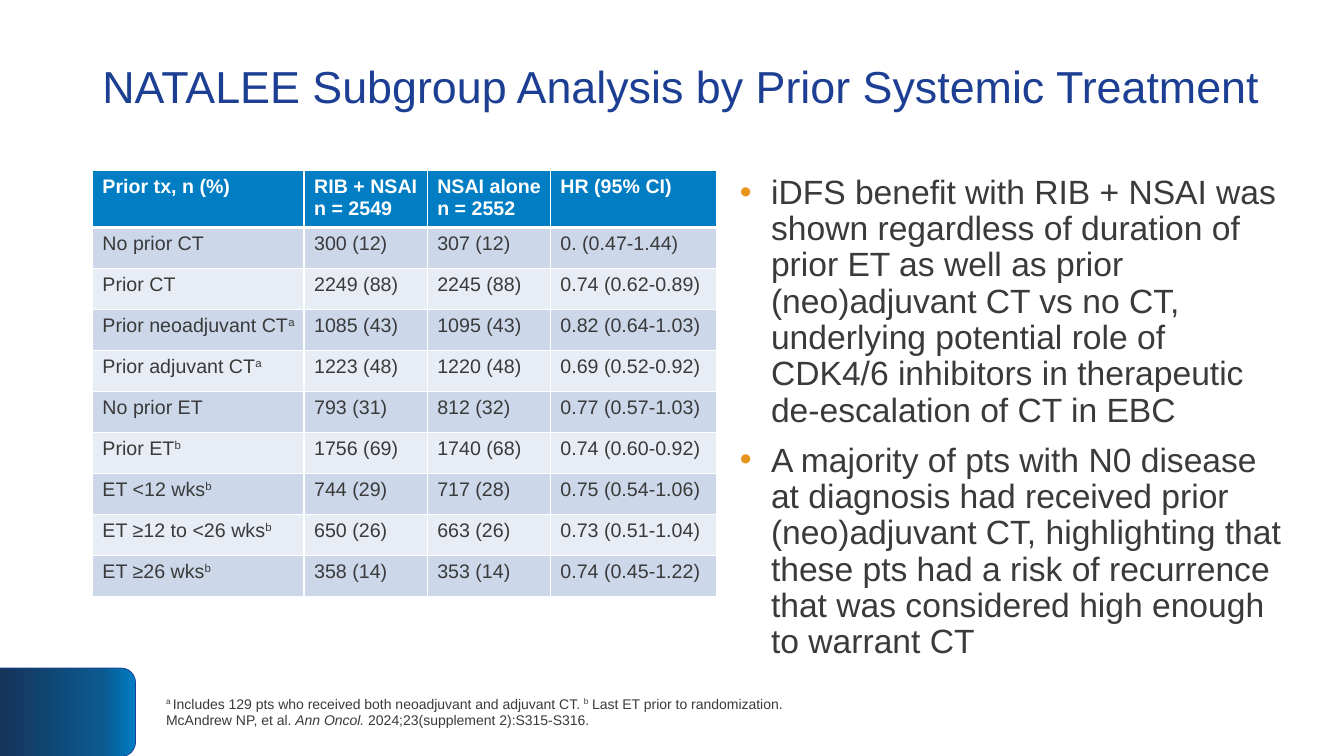
from lxml import etree
from pptx import Presentation
from pptx.dml.color import RGBColor
from pptx.enum.shapes import MSO_SHAPE
from pptx.enum.text import MSO_ANCHOR
from pptx.oxml import parse_xml
from pptx.oxml.ns import nsdecls, qn
from pptx.util import Inches, Pt

MIDDLE, TOP = MSO_ANCHOR.MIDDLE, MSO_ANCHOR.TOP
TAB_SHAPE = MSO_SHAPE.ROUND_2_SAME_RECTANGLE
BLUE = RGBColor(0x00, 0x7D, 0xC3)
MID_BLUE = RGBColor(0x0B, 0x59, 0x8F)
NAVY = RGBColor(0x15, 0x34, 0x5A)
TITLE_BLUE = RGBColor(0x1C, 0x3F, 0x93)
INK = RGBColor(0x3A, 0x3A, 0x3A)
ORANGE = RGBColor(0xE8, 0x93, 0x1A)
WHITE = RGBColor(0xFF, 0xFF, 0xFF)
BANDS = (RGBColor(0xCC, 0xD7, 0xE9), RGBColor(0xE7, 0xEC, 0xF5))

WIDTH, HEIGHT = Inches(13.33), Inches(7.5)
COLS, ROWS = 160, 90
LEFT, TOP_ROW = 11, 20.28  # shared content origin

TITLE = "NATALEE Subgroup Analysis by Prior Systemic Treatment"
# ^ toggles superscript, * toggles italic
TABLE = [
    ("Prior tx, n (%)", "RIB + NSAI\nn = 2549", "NSAI alone\nn = 2552", "HR (95% CI)"),
    ("No prior CT", "300 (12)", "307 (12)", "0. (0.47-1.44)"),
    ("Prior CT", "2249 (88)", "2245 (88)", "0.74 (0.62-0.89)"),
    ("Prior neoadjuvant CT^a", "1085 (43)", "1095 (43)", "0.82 (0.64-1.03)"),
    ("Prior adjuvant CT^a", "1223 (48)", "1220 (48)", "0.69 (0.52-0.92)"),
    ("No prior ET", "793 (31)", "812 (32)", "0.77 (0.57-1.03)"),
    ("Prior ET^b", "1756 (69)", "1740 (68)", "0.74 (0.60-0.92)"),
    ("ET <12 wks^b", "744 (29)", "717 (28)", "0.75 (0.54-1.06)"),
    ("ET ≥12 to <26 wks^b", "650 (26)", "663 (26)", "0.73 (0.51-1.04)"),
    ("ET ≥26 wks^b", "358 (14)", "353 (14)", "0.74 (0.45-1.22)"),
]
FINDINGS = [
    "iDFS benefit with RIB + NSAI was shown regardless of duration of prior ET as well as "
    "prior (neo)adjuvant CT vs no CT, underlying potential role of CDK4/6 inhibitors in "
    "therapeutic de-escalation of CT in EBC",
    "A majority of pts with N0 disease at diagnosis had received prior (neo)adjuvant CT, "
    "highlighting that these pts had a risk of recurrence that was considered high enough "
    "to warrant CT",
]
FOOTNOTES = [
    "^a ^Includes 129 pts who received both neoadjuvant and adjuvant CT. "
    "^b^ Last ET prior to randomization.",
    "McAndrew NP, et al. *Ann Oncol. *2024;23(supplement 2):S315-S316.",
]


class SlideBuilder:
    font = "Arial"

    def __init__(self, prs):
        self.s = prs.slides.add_slide(prs.slide_layouts[6])

    def x(self, cols):
        return round(WIDTH * cols / COLS)

    def y(self, rows):
        return round(HEIGHT * rows / ROWS)

    def box(self, left, top, width, height):
        return self.x(left), self.y(top), self.x(width), self.y(height)

    def add_runs(self, p, text, size, color, bold=False):
        """Fill a paragraph, turning line breaks and toggles into runs."""
        for n, line in enumerate(text.split("\n")):
            if n:
                p.add_line_break()
            for i, part in enumerate(line.split("^")):
                for j, piece in enumerate(part.split("*")):
                    if not piece:
                        continue
                    r = p.add_run()
                    r.text = piece
                    r.font.name, r.font.size = self.font, Pt(size)
                    r.font.bold, r.font.italic = bold, j % 2 == 1
                    r.font.color.rgb = color
                    if i % 2:
                        r.font._element.set("baseline", "30000")

    def bullet(self, p, color):
        pPr = p._p.get_or_add_pPr()
        indent = Inches(0.31)
        pPr.set("marL", str(indent))
        pPr.set("indent", str(-indent))
        clr = etree.SubElement(pPr, qn("a:buClr"))
        etree.SubElement(clr, qn("a:srgbClr"), val=str(color))
        etree.SubElement(pPr, qn("a:buFont"), typeface=self.font)
        etree.SubElement(pPr, qn("a:buChar"), char="•")

    def text(self, area, lines, size, color, anchor=TOP, spacing=1.0, gap=0, bullet=None):
        tf = self.s.shapes.add_textbox(*self.box(*area)).text_frame
        tf.word_wrap, tf.vertical_anchor = True, anchor
        for i, line in enumerate(lines):
            p = tf.add_paragraph() if i else tf.paragraphs[0]
            if bullet is not None:
                self.bullet(p, bullet)
            p.line_spacing = spacing
            if i:
                p.space_before = Pt(gap)
            self.add_runs(p, line, size, color)

    def corner_tab(self, area, stops, line):
        sp = self.s.shapes.add_shape(TAB_SHAPE, *self.box(*area))
        sp.rotation = 90
        sp.shadow.inherit = False
        sp.line.color.rgb, sp.line.width = line, Pt(0.5)
        gs = "".join(f'<a:gs pos="{pos * 1000}"><a:srgbClr val="{color}"/></a:gs>'
                     for pos, color in stops)
        grad = parse_xml(f'<a:gradFill {nsdecls("a")} rotWithShape="1"><a:gsLst>{gs}</a:gsLst>'
                         '<a:lin ang="5400000" scaled="0"/></a:gradFill>')
        sp._element.spPr.find(qn("a:prstGeom")).addnext(grad)

    def borders(self, cell, top, bottom):
        tcPr = cell._tc.get_or_add_tcPr()
        for side, width in (("L", 1), ("R", 1), ("T", top), ("B", bottom)):
            ln = etree.SubElement(tcPr, qn(f"a:ln{side}"), w=str(Pt(width)))
            fill = etree.SubElement(ln, qn("a:solidFill"))
            etree.SubElement(fill, qn("a:srgbClr"), val=str(WHITE))

    def table(self, left, top, widths, row_height, data):
        area = self.box(left, top, sum(widths), row_height * len(data))
        table = self.s.shapes.add_table(len(data), len(widths), *area).table
        for column, width in zip(table.columns, widths):
            column.width = self.x(width)
        for i, values in enumerate(data):
            header = i == 0
            for j, value in enumerate(values):
                cell = table.cell(i, j)
                cell.margin_right = 0
                self.borders(cell, 3 if i == 1 else 1, 3 if header else 1)
                cell.fill.solid()
                cell.fill.fore_color.rgb = BLUE if header else BANDS[(i - 1) % 2]
                self.add_runs(cell.text_frame.paragraphs[0], value, 14,
                              WHITE if header else INK, header)


def main():
    prs = Presentation()
    prs.slide_width, prs.slide_height = WIDTH, HEIGHT
    slide = SlideBuilder(prs)
    slide.corner_tab((2.76, 76.7, 10.56, 16.2),
                     [(0, BLUE), (25, MID_BLUE), (100, NAVY)], TITLE_BLUE)
    slide.text((LEFT, 4.8, 143.4, 11.64), [TITLE], 32, TITLE_BLUE, MIDDLE, 0.9)
    slide.table(LEFT, TOP_ROW, (25.2, 14.66, 14.66, 19.8), 4.88, TABLE)
    slide.text((86.9, TOP_ROW, 67.5, 59.2), FINDINGS, 24, INK,
               spacing=0.9, gap=10, bullet=ORANGE)
    slide.text((18.6, 79.5, 139.8, 10.5), FOOTNOTES, 10, INK, MIDDLE)
    prs.save("out.pptx")


if __name__ == "__main__":
    main()
